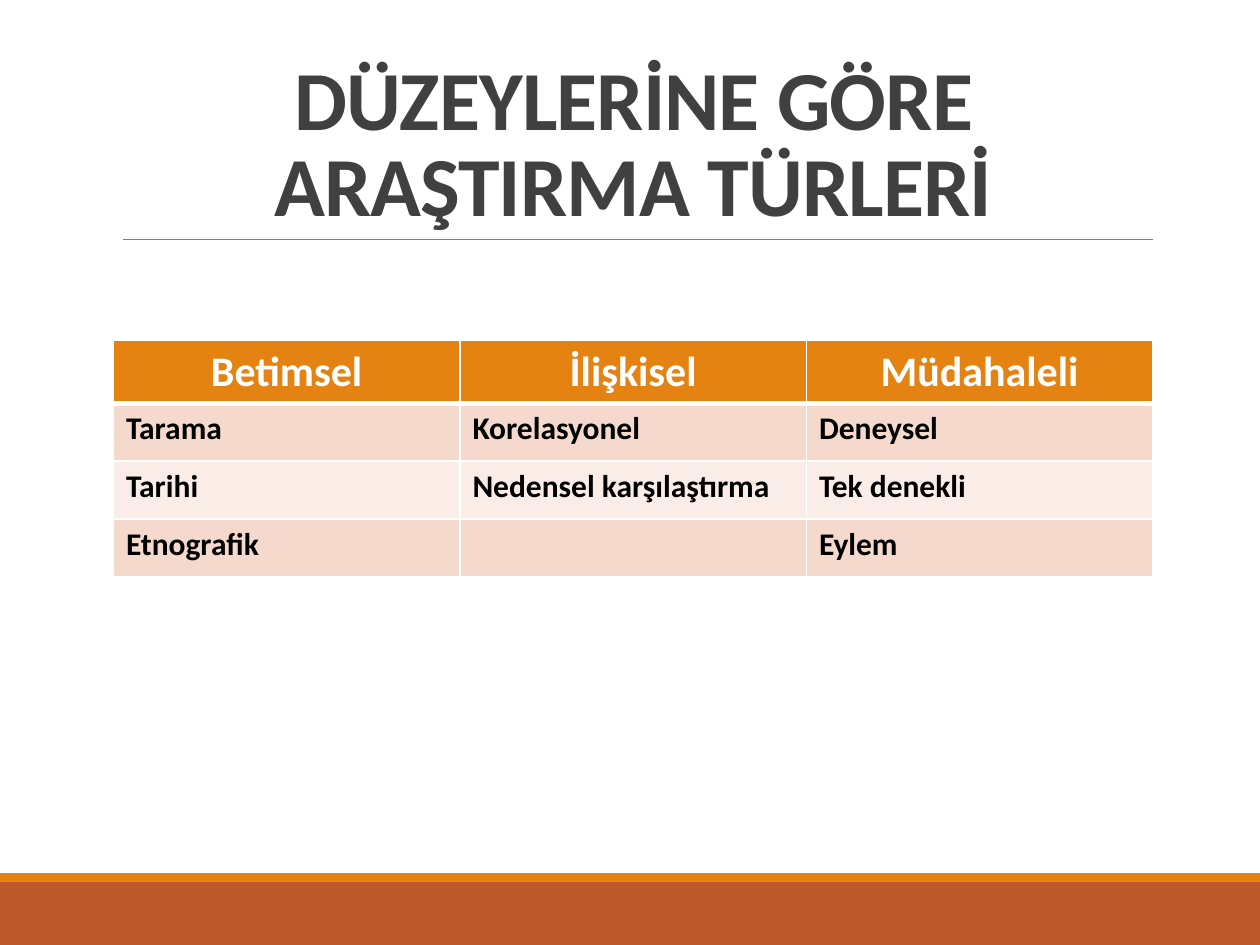
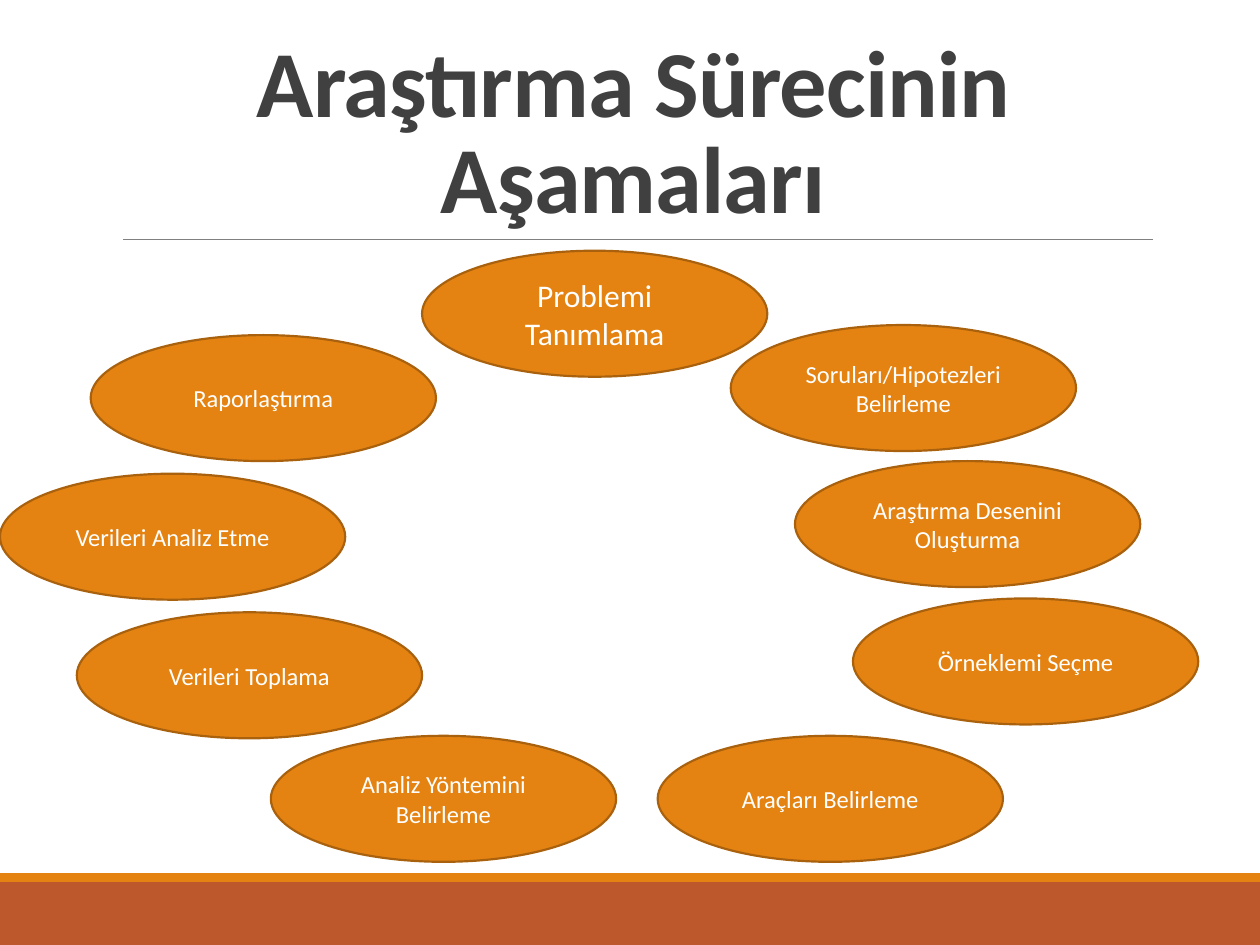
from lxml import etree
from pptx import Presentation
from pptx.dml.color import RGBColor
from pptx.enum.shapes import MSO_CONNECTOR, MSO_SHAPE
from pptx.enum.text import MSO_ANCHOR, PP_ALIGN
from pptx.oxml.ns import qn
from pptx.util import Inches, Pt

RECTANGLE, ELLIPSE = MSO_SHAPE.RECTANGLE, MSO_SHAPE.OVAL
STRAIGHT = MSO_CONNECTOR.STRAIGHT
CENTER, LEFT = PP_ALIGN.CENTER, PP_ALIGN.LEFT
BOTTOM, MIDDLE = MSO_ANCHOR.BOTTOM, MSO_ANCHOR.MIDDLE

FONT = "Calibri"
COLORS = {
    "orange": "E48312",
    "rust": "BD582C",
    "outline": "A9610D",
    "rule": "808080",
    "title": "404040",
    "white": "FFFFFF",
    "black": "000000",
    "band_dark": "F5D9CC",
    "band_light": "FAEDE7",
}

RESEARCH_TYPES = [
    ["Betimsel", "İlişkisel", "Müdahaleli"],
    ["Tarama", "Korelasyonel", "Deneysel"],
    ["Tarihi", "Nedensel karşılaştırma", "Tek denekli"],
    ["Etnografik", "", "Eylem"],
]

STAGES = [
    ("Problemi Tanımlama", 3.35, 1.99, 18),
    ("Soruları/Hipotezleri Belirleme", 5.8, 2.58, 14),
    ("Araştırma Desenini Oluşturma", 6.31, 3.66, 14),
    ("Örneklemi Seçme", 6.77, 4.75, 14),
    ("Araçları Belirleme", 5.22, 5.84, 14),
    ("Analiz Yöntemini Belirleme", 2.15, 5.84, 14),
    ("Verileri Toplama", 0.61, 4.86, 14),
    ("Verileri Analiz Etme", 0, 3.76, 14),
    ("Raporlaştırma", 0.72, 2.66, 14),
]


def rgb(name):
    return RGBColor.from_string(COLORS[name])


class Deck:
    def __init__(self):
        self.presentation = Presentation()
        self.presentation.slide_width = Inches(10)
        self.presentation.slide_height = Inches(7.5)
        self.slide = None

    def new_slide(self, title, size):
        self.slide = self.presentation.slides.add_slide(self.presentation.slide_layouts[6])
        self.shape(RECTANGLE, 0, 7, 10, 0.5, "rust")
        self.shape(RECTANGLE, 0, 6.93, 10, 0.07, "orange")
        self.rule(0.98, 9.15, 1.9)
        self.title(title, size)

    def set_text(self, frame, text, size, color, align, bold=False):
        frame.text = text
        paragraph = frame.paragraphs[0]
        paragraph.alignment = align
        for run in paragraph.runs:
            run.font.name = FONT
            run.font.size = Pt(size)
            run.font.bold = bold
            run.font.color.rgb = rgb(color)
        return paragraph

    def shape(self, kind, left, top, width, height, fill, outline=None):
        shape = self.slide.shapes.add_shape(
            kind, Inches(left), Inches(top), Inches(width), Inches(height))
        shape.shadow.inherit = False
        shape.fill.solid()
        shape.fill.fore_color.rgb = rgb(fill)
        if outline:
            shape.line.color.rgb = rgb(outline)
            shape.line.width = Pt(1.25)
        else:
            shape.line.fill.background()
        return shape

    def rule(self, left, right, top):
        rule = self.slide.shapes.add_connector(
            STRAIGHT, Inches(left), Inches(top), Inches(right), Inches(top))
        rule.line.color.rgb = rgb("rule")
        rule.line.width = Pt(0.5)
        etree.SubElement(rule._element.spPr, qn("a:effectLst"))

    def title(self, text, size):
        box = self.slide.shapes.add_textbox(
            Inches(0.9), Inches(0.31), Inches(8.25), Inches(1.59))
        frame = box.text_frame
        frame.word_wrap = True
        frame.vertical_anchor = BOTTOM
        paragraph = self.set_text(frame, text, size, "title", CENTER, bold=True)
        paragraph.line_spacing = 0.85
        for run in paragraph.runs:
            run._r.get_or_add_rPr().set("spc", "-50")

    def stage(self, text, left, top, size):
        ellipse = self.shape(ELLIPSE, left, top, 2.74, 1, "orange", "outline")
        frame = ellipse.text_frame
        frame.word_wrap = True
        frame.vertical_anchor = MIDDLE
        self.set_text(frame, text, size, "white", CENTER)

    def borders(self, cell, top, bottom):
        properties = cell._tc.get_or_add_tcPr()
        for side, points in (("L", 1), ("R", 1), ("T", top), ("B", bottom)):
            line = etree.SubElement(properties, qn(f"a:ln{side}"), w=str(Pt(points)))
            fill = etree.SubElement(line, qn("a:solidFill"))
            etree.SubElement(fill, qn("a:srgbClr"), val=COLORS["white"])

    def table(self, rows, left, top, width, header_height, row_height):
        height = header_height + row_height * (len(rows) - 1)
        table = self.slide.shapes.add_table(
            len(rows), len(rows[0]), Inches(left), Inches(top),
            Inches(width), Inches(height)).table
        table.first_row = False
        table.horz_banding = False
        for r, row in enumerate(rows):
            header = r == 0
            table.rows[r].height = Inches(header_height if header else row_height)
            band = "orange" if header else "band_dark" if r % 2 else "band_light"
            for c, text in enumerate(row):
                cell = table.cell(r, c)
                self.borders(cell, 3 if r == 1 else 1, 3 if header else 1)
                cell.fill.solid()
                cell.fill.fore_color.rgb = rgb(band)
                self.set_text(cell.text_frame, text, 24 if header else 18,
                              "white" if header else "black",
                              CENTER if header else LEFT, bold=True)


def main():
    deck = Deck()
    deck.new_slide("DÜZEYLERİNE GÖRE ARAŞTIRMA TÜRLERİ", 48)
    deck.table(RESEARCH_TYPES, 0.9, 2.7, 8.25, 0.5, 0.46)
    deck.new_slide("Araştırma Sürecinin Aşamaları", 54)
    for stage in STAGES:
        deck.stage(*stage)
    deck.presentation.save("out.pptx")


if __name__ == "__main__":
    main()
